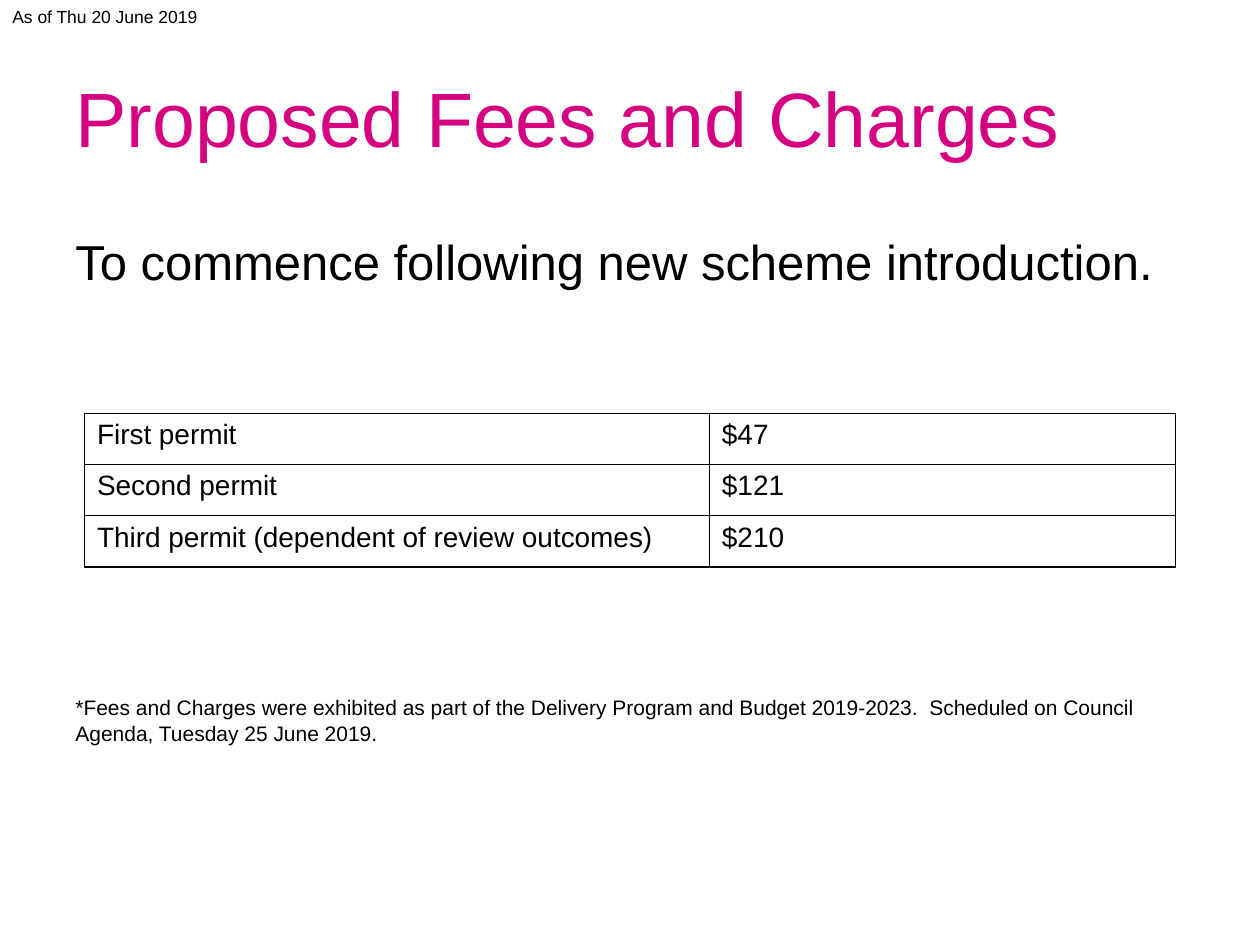
from dataclasses import dataclass

from lxml.etree import SubElement
from pptx import Presentation
from pptx.dml.color import RGBColor
from pptx.enum.text import MSO_ANCHOR
from pptx.oxml.ns import qn
from pptx.slide import Slide
from pptx.table import _Cell
from pptx.text.text import _Paragraph
from pptx.util import Inches, Pt

FONT = "Arial"
BLACK = "000000"
PINK = "D4007F"


@dataclass
class Line:
    text: str
    size: float
    color: str = BLACK
    before: float = 0


@dataclass
class Box:
    left: float
    top: float
    width: float
    height: float
    lines: list[Line]
    anchor: MSO_ANCHOR = MSO_ANCHOR.TOP


BOXES = [
    Box(0.5, 0.3, 9, 1.25, [Line("Proposed Fees and Charges", 44, PINK)], MSO_ANCHOR.MIDDLE),
    Box(0.5, 1.79, 8.91, 4.48, [
        Line("To commence following new scheme introduction.", 28),
        Line("*Fees and Charges were exhibited as part of the Delivery Program and "
             "Budget 2019-2023.  Scheduled on Council Agenda, Tuesday 25 June 2019.",
             12, before=231),
    ]),
    Box(0, 0, 1.97, 0.27, [Line("As of Thu 20 June 2019", 10)]),
]

FEES = [
    ("First permit", "$47"),
    ("Second permit", "$121"),
    ("Third permit (dependent of review outcomes)", "$210"),
]
WIDTHS = (4.96, 3.7)


def paint(color: str) -> RGBColor:
    return RGBColor.from_string(color)


def write(para: _Paragraph, line: Line) -> None:
    para.text = line.text
    para.space_before = Pt(line.before)
    for run in para.runs:
        run.font.name = FONT
        run.font.size = Pt(line.size)
        run.font.color.rgb = paint(line.color)


def draw_box(slide: Slide, box: Box) -> None:
    shape = slide.shapes.add_textbox(
        Inches(box.left), Inches(box.top), Inches(box.width), Inches(box.height))
    frame = shape.text_frame
    frame.word_wrap = True
    frame.vertical_anchor = box.anchor
    for index, line in enumerate(box.lines):
        para = frame.add_paragraph() if index else frame.paragraphs[0]
        write(para, line)


def add_border(cell: _Cell) -> None:
    props = cell._tc.get_or_add_tcPr()
    for side in ("lnL", "lnR", "lnT", "lnB"):
        edge = SubElement(props, qn(f"a:{side}"), w=str(Pt(1)))
        fill = SubElement(edge, qn("a:solidFill"))
        SubElement(fill, qn("a:srgbClr"), val=BLACK)


def draw_fees(slide: Slide) -> None:
    table = slide.shapes.add_table(
        len(FEES), len(WIDTHS), Inches(0.67), Inches(3.28),
        Inches(sum(WIDTHS)), Inches(1.22)).table
    table.first_row = False
    table.horz_banding = False
    for column, width in zip(table.columns, WIDTHS):
        column.width = Inches(width)
    for row, fee in zip(table.rows, FEES):
        for cell, text in zip(row.cells, fee):
            write(cell.text_frame.paragraphs[0], Line(text, 16))
            add_border(cell)
            cell.fill.background()


def main() -> None:
    deck = Presentation()
    deck.slide_width = Inches(10)
    deck.slide_height = Inches(7.5)
    slide = deck.slides.add_slide(deck.slide_layouts[6])
    for box in BOXES:
        draw_box(slide, box)
    draw_fees(slide)
    deck.save("out.pptx")


if __name__ == "__main__":
    main()
